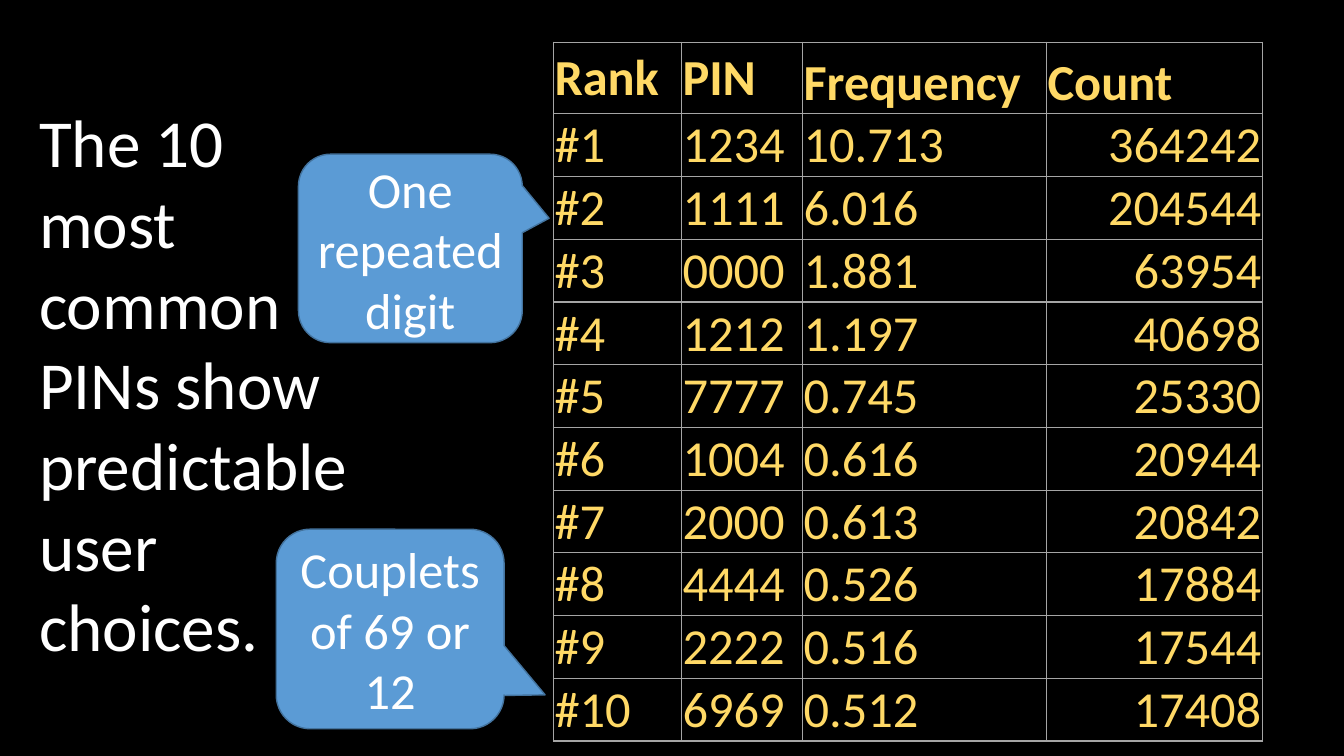
from lxml import etree
from pptx import Presentation
from pptx.dml.color import RGBColor
from pptx.enum.shapes import MSO_SHAPE
from pptx.enum.text import MSO_ANCHOR, MSO_AUTO_SIZE, PP_ALIGN
from pptx.oxml.ns import qn
from pptx.util import Inches, Pt

CALLOUT = MSO_SHAPE.ROUNDED_RECTANGULAR_CALLOUT
MIDDLE, BOTTOM = MSO_ANCHOR.MIDDLE, MSO_ANCHOR.BOTTOM
LEFT, CENTER, RIGHT = PP_ALIGN.LEFT, PP_ALIGN.CENTER, PP_ALIGN.RIGHT
GROW = MSO_AUTO_SIZE.SHAPE_TO_FIT_TEXT

BLACK = RGBColor(0x00, 0x00, 0x00)
WHITE = RGBColor(0xFF, 0xFF, 0xFF)
YELLOW = RGBColor(0xFF, 0xD9, 0x66)
BLUE = RGBColor(0x5B, 0x9B, 0xD5)
DARK_BLUE = RGBColor(0x43, 0x73, 0x9E)
GREY = RGBColor(0xA5, 0xA5, 0xA5)

MESSAGE = "The 10 most common PINs show predictable user choices."
HEADINGS = ("Rank", "PIN", "Frequency", "Count")
PINS = [
    ("1234", "10.713", "364242"),
    ("1111", "6.016", "204544"),
    ("0000", "1.881", "63954"),
    ("1212", "1.197", "40698"),
    ("7777", "0.745", "25330"),
    ("1004", "0.616", "20944"),
    ("2000", "0.613", "20842"),
    ("4444", "0.526", "17884"),
    ("2222", "0.516", "17544"),
    ("6969", "0.512", "17408"),
]

GRID = Inches(0.1)
MESSAGE_BOX = (2.9, 9.5, 33.3, 57.6)
TABLE_CORNER = (54.9, 4.2)
COLUMNS = (12.7, 12, 24.2, 21.4)
HEADING_ROW, PIN_ROW = 7.1, 6.1
CALLOUTS = [
    ("One repeated digit", (29.6, 15.3, 22.2, 18.7), (0.62, -0.16, 0.17)),
    ("Couplets of 69 or 12", (27.4, 52.5, 22.6, 19.8), (0.68, 0.33, 0.17)),
]


def on_grid(lengths):
    return [round(length * GRID) for length in lengths]


def write(frame, text, size=36, color=WHITE, bold=False, align=LEFT):
    paragraph = frame.paragraphs[0]
    paragraph.alignment = align
    run = paragraph.add_run()
    run.text = text
    run.font.name = "Calibri"
    run.font.size = Pt(size)
    run.font.bold = bold
    run.font.color.rgb = color


def draw_borders(cell):
    properties = cell._tc.get_or_add_tcPr()
    for position, side in enumerate(("a:lnL", "a:lnR", "a:lnT", "a:lnB")):
        line = etree.Element(qn(side), w=str(Pt(1)))
        fill = etree.SubElement(line, qn("a:solidFill"))
        etree.SubElement(fill, qn("a:srgbClr"), val=str(GREY))
        properties.insert(position, line)


def add_message(slide):
    message = slide.shapes.add_textbox(*on_grid(MESSAGE_BOX)).text_frame
    message.word_wrap = True
    message.auto_size = GROW
    write(message, MESSAGE, size=48)


def add_pin_table(slide):
    ranked = [(f"#{rank}", *pin) for rank, pin in enumerate(PINS, 1)]
    rows = [HEADINGS, *ranked]
    heights = [HEADING_ROW] + [PIN_ROW] * len(PINS)
    area = on_grid((*TABLE_CORNER, sum(COLUMNS), sum(heights)))
    table = slide.shapes.add_table(len(rows), len(COLUMNS), *area).table
    table.horz_banding = False
    for column, width in zip(table.columns, on_grid(COLUMNS)):
        column.width = width
    for row, height in zip(table.rows, on_grid(heights)):
        row.height = height
    for r, values in enumerate(rows):
        for c, value in enumerate(values):
            cell = table.cell(r, c)
            cell.margin_left = cell.margin_right = cell.margin_top = Inches(0.01)
            cell.margin_bottom = 0
            cell.vertical_anchor = MIDDLE if c < 2 else BOTTOM
            cell.fill.background()
            draw_borders(cell)
            align = RIGHT if r and HEADINGS[c] == "Count" else LEFT
            write(cell.text_frame, value, color=YELLOW, bold=r == 0, align=align)


def add_callout(slide, text, box, pointer):
    callout = slide.shapes.add_shape(CALLOUT, *on_grid(box))
    callout.shadow.inherit = False
    for index, share in enumerate(pointer):
        callout.adjustments[index] = share
    callout.fill.solid()
    callout.fill.fore_color.rgb = BLUE
    callout.line.color.rgb = DARK_BLUE
    callout.line.width = Pt(1)
    callout.text_frame.word_wrap = True
    callout.text_frame.vertical_anchor = MIDDLE
    write(callout.text_frame, text, align=CENTER)


def main():
    deck = Presentation()
    deck.slide_width, deck.slide_height = Inches(13.33), Inches(7.5)
    slide = deck.slides.add_slide(deck.slide_layouts[6])
    slide.background.fill.solid()
    slide.background.fill.fore_color.rgb = BLACK
    add_pin_table(slide)
    add_message(slide)
    for text, box, pointer in CALLOUTS:
        add_callout(slide, text, box, pointer)
    deck.save("out.pptx")


if __name__ == "__main__":
    main()
